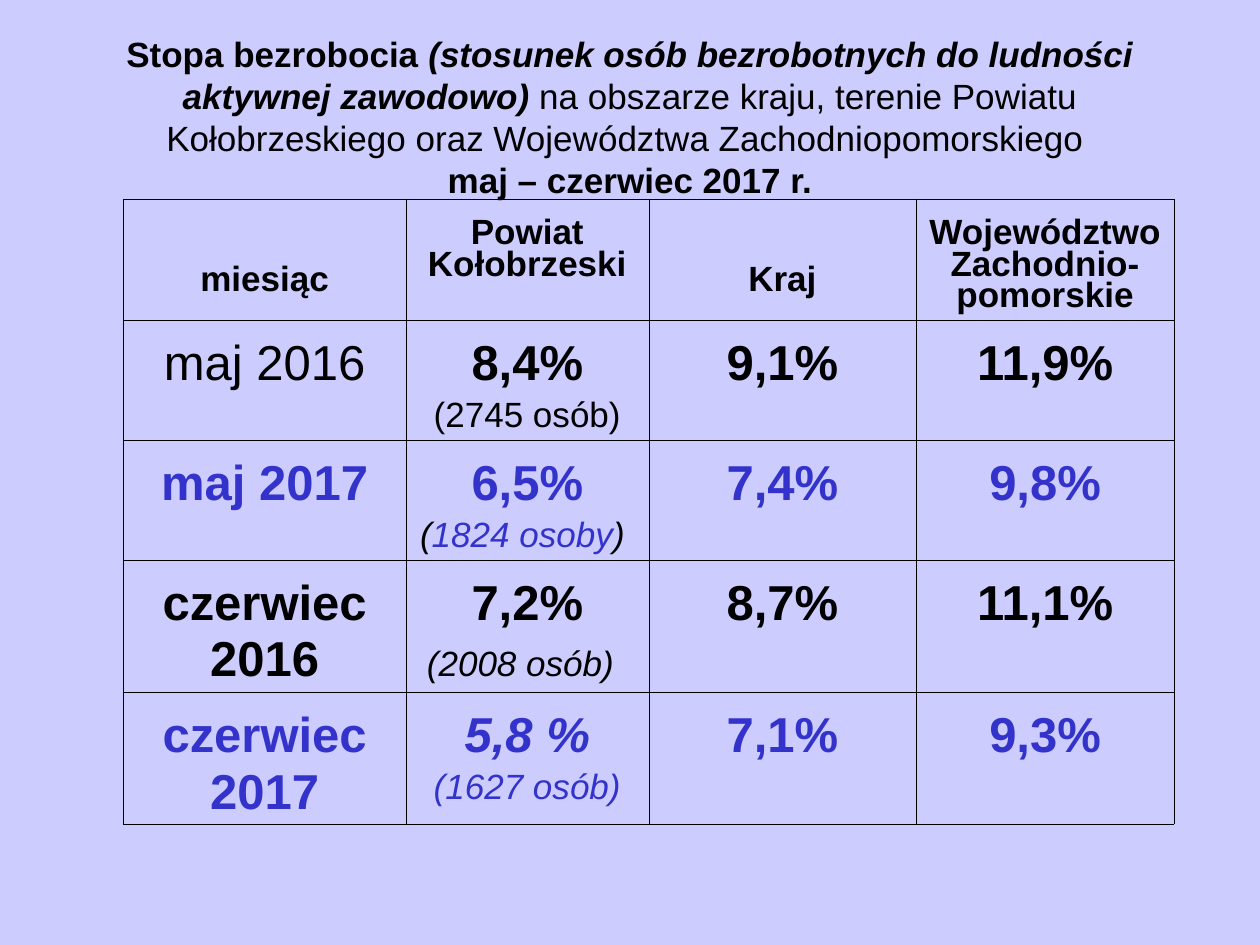
from lxml.etree import SubElement as Sub
from pptx import Presentation
from pptx.dml.color import RGBColor as Rgb
from pptx.enum.text import MSO_ANCHOR as Anchor, MSO_AUTO_SIZE as Fit, PP_ALIGN as Align
from pptx.oxml.ns import qn
from pptx.util import Inches, Pt

COLORS = {"back": "CCCCFF", "black": "000000", "blue": "3333CC"}
WIDTHS = [2.24, 1.93, 2.12, 2.05]
HEIGHTS = [0.94, 0.95, 0.88, 0.88, 0.88]

# Header cells: text and top inset (single words sit one line lower)
HEADS = [("miesiąc", 0.53), ("Powiat Kołobrzeski", 0.16),
         ("Kraj", 0.53), ("Województwo Zachodnio-pomorskie", 0.16)]

# Runs are (text, format); a cell is a list of paragraphs, each a list of runs
SMALL = {"size": 20, "bold": False}
SLANT = {**SMALL, "italic": True}
ROWS = [
    ("black", [[[("maj 2016", {"bold": False})]],
               [[("8,4%", {})], [("(2745 osób)", SMALL)]],
               [[("9,1%", {})]], [[("11,9%", {})]]]),
    ("blue", [[[("maj 2017", {})]],
              [[("6,5%", {})],
               [("(", {**SLANT, "color": "black"}), ("1824 osoby", SLANT),
                (") ", {**SLANT, "color": "black"})]],
              [[("7,4%", {})]], [[("9,8%", {})]]]),
    ("black", [[[("czerwiec", {})], [("2016", {})]],
               [[("7,2%", {})], [("(2008 osób)", SLANT), (" ", {"bold": False})]],
               [[("8,7%", {})]], [[("11,1%", {})]]]),
    ("blue", [[[("czerwiec", {})], [("2017", {})]],
              [[("5,8 %", {"italic": True})], [("(1627 osób)", SLANT)]],
              [[("7,1%", {})]], [[("9,3%", {})]]]),
]


def write(para, text, size=28, bold=True, italic=False, color="black"):
    run = para.add_run()
    run.text = text
    font = run.font
    font.name, font.size = "Arial", Pt(size)
    font.bold, font.italic = bold, italic
    font.color.rgb = Rgb.from_string(COLORS[color])


def add_title(slide):
    title = slide.shapes.title
    title.left, title.top = Inches(0.5), Inches(0.3)
    title.width, title.height = Inches(9), Inches(1.25)
    frame = title.text_frame
    frame.auto_size, frame.word_wrap = Fit.NONE, True
    frame.vertical_anchor = Anchor.MIDDLE
    para = frame.paragraphs[0]
    para.alignment = Align.CENTER
    write(para, "Stopa bezrobocia ", size=20)
    write(para, "(stosunek osób bezrobotnych do ludności aktywnej zawodowo)",
          size=20, italic=True)
    write(para, " na obszarze kraju, terenie Powiatu Kołobrzeskiego "
          "oraz Województwa Zachodniopomorskiego ", size=20, bold=False)
    para.add_line_break()
    write(para, "maj – czerwiec 2017 r.", size=20)


def add_edges(cell, outer):
    """Draw the four cell borders, heavier on the sides named in outer."""
    props = cell._tc.get_or_add_tcPr()
    for side in "LRTB":
        width = Pt(0.23 if side in outer else 0.11)
        line = Sub(props, qn(f"a:ln{side}"), w=str(width))
        fill = Sub(line, qn("a:solidFill"))
        Sub(fill, qn("a:srgbClr"), val=COLORS["black"])


def fill_cell(cell, paras, inset, space, **style):
    cell.margin_top = Inches(inset)
    cell.fill.background()
    frame = cell.text_frame
    for i, runs in enumerate(paras):
        para = frame.add_paragraph() if i else frame.paragraphs[0]
        para.alignment = Align.CENTER
        para.line_spacing, para.space_before = 0.81, Pt(space)
        for text, format in runs:
            write(para, text, **{**style, **format})


def add_grid(slide):
    frame = slide.shapes.add_table(
        len(HEIGHTS), len(WIDTHS), Inches(0.98), Inches(1.58),
        Inches(sum(WIDTHS)), Inches(sum(HEIGHTS)))
    table = frame.table
    table.first_row = table.horz_banding = False
    for col, width in zip(table.columns, WIDTHS):
        col.width = Inches(width)
    for row, height in zip(table.rows, HEIGHTS):
        row.height = Inches(height)

    # Borders
    last = len(WIDTHS) - 1
    for r in range(len(HEIGHTS)):
        for c in range(len(WIDTHS)):
            outer = ("T" if r == 0 else "") + {0: "L", last: "R"}.get(c, "")
            add_edges(table.cell(r, c), outer)

    # Header, then the months
    for c, (text, inset) in enumerate(HEADS):
        fill_cell(table.cell(0, c), [[(text, {})]], inset, 5, size=20)
    for r, (color, cells) in enumerate(ROWS, 1):
        for c, paras in enumerate(cells):
            fill_cell(table.cell(r, c), paras, 0.2, 7, color=color)


def main():
    deck = Presentation()
    deck.slide_width, deck.slide_height = Inches(10), Inches(7.5)
    slide = deck.slides.add_slide(deck.slide_layouts[5])
    back = slide.background.fill
    back.solid()
    back.fore_color.rgb = Rgb.from_string(COLORS["back"])
    add_title(slide)
    add_grid(slide)
    deck.save("out.pptx")


if __name__ == "__main__":
    main()
